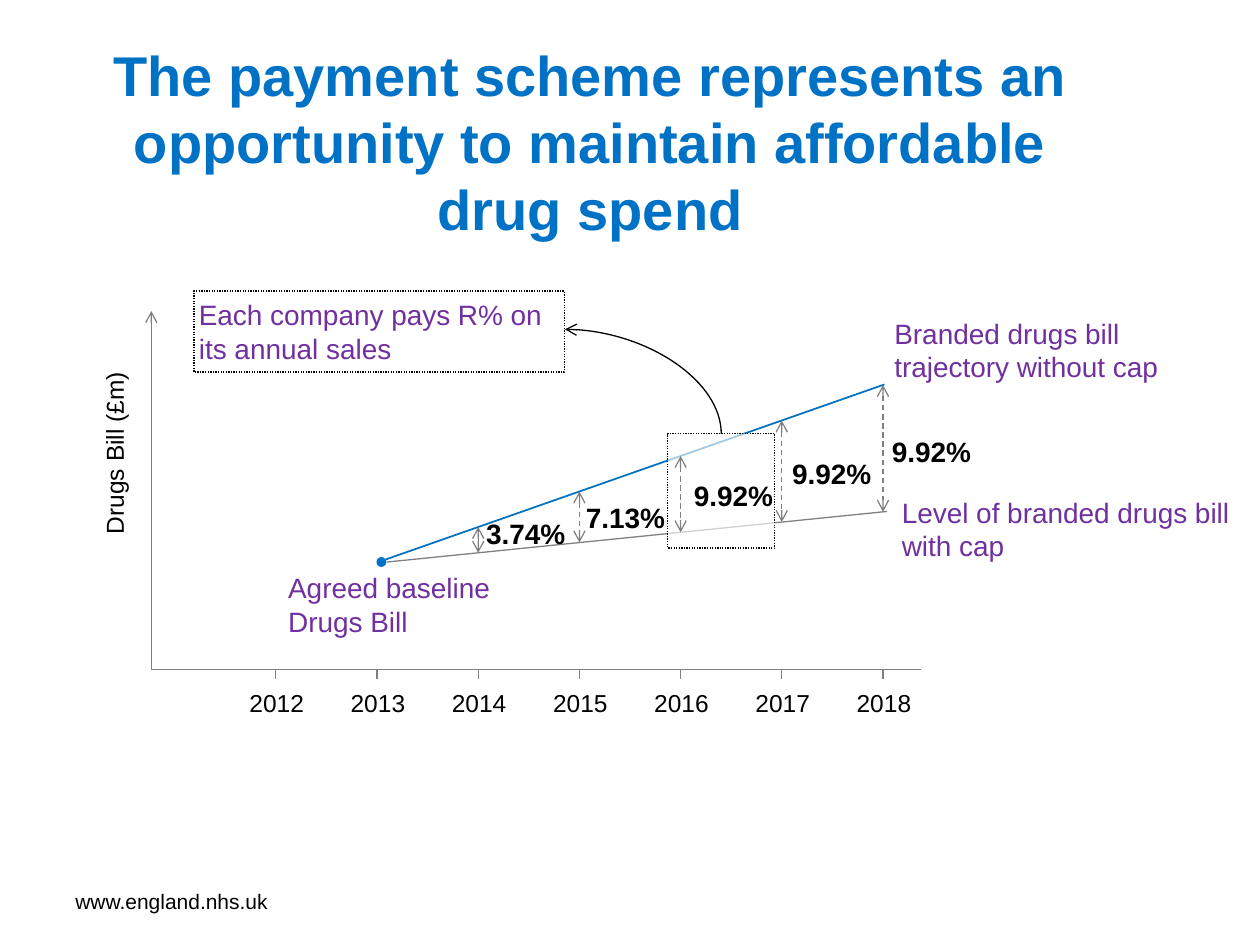
from lxml.etree import SubElement
from pptx import Presentation
from pptx.dml.color import RGBColor
from pptx.enum.dml import MSO_LINE
from pptx.enum.shapes import MSO_CONNECTOR, MSO_SHAPE
from pptx.enum.text import MSO_ANCHOR, MSO_AUTO_SIZE, PP_ALIGN
from pptx.oxml.ns import qn
from pptx.util import Cm, Pt

BLACK = RGBColor(0, 0, 0)
WHITE = RGBColor(0xFF, 0xFF, 0xFF)
GREY = RGBColor(0x80, 0x80, 0x80)
BLUE = RGBColor(0x00, 0x72, 0xC6)
LINE_BLUE = RGBColor(0x00, 0x70, 0xC0)
PURPLE = RGBColor(0x70, 0x30, 0xA0)

AXIS_X, AXIS_Y = 3.05, 13.49
YEAR_X, YEAR_STEP = 5.56, 2.04
UNCAPPED = (7.77, 11.28, 17.83, 7.75)
CAPPED = (7.8, 11.33, 17.88, 10.31)


def write(shape, text, size, color=BLACK, bold=False, align=PP_ALIGN.LEFT,
          anchor=MSO_ANCHOR.TOP, inset=None):
    frame = shape.text_frame
    frame.word_wrap = True
    frame.auto_size = MSO_AUTO_SIZE.NONE
    frame.vertical_anchor = anchor
    if inset is not None:
        frame.margin_left = frame.margin_right = Cm(inset)
        frame.margin_top = frame.margin_bottom = Cm(inset)
    para = frame.paragraphs[0]
    para.alignment = align
    run = para.add_run()
    run.text = text
    font = run.font
    font.name, font.size, font.bold = "Arial", Pt(size), bold
    font.color.rgb = color


def add_text(slide, place, text, size, **style):
    box = slide.shapes.add_textbox(*map(Cm, place))
    write(box, text, size, **style)
    return box


def add_line(slide, ends, color=GREY, width=0.75, dash=None, heads=(),
             kind=MSO_CONNECTOR.STRAIGHT):
    link = slide.shapes.add_connector(kind, *map(Cm, ends))
    link.line.color.rgb = color
    link.line.width = Pt(width)
    if dash:
        link.line.dash_style = dash
    for head in heads:
        SubElement(link.line._get_or_add_ln(), qn(f"a:{head}"), type="arrow")
    SubElement(link._element.spPr, qn("a:effectLst"))
    return link


def add_shape(slide, kind, place, fill=None, alpha=None, dotted=False):
    shape = slide.shapes.add_shape(kind, *map(Cm, place))
    shape.shadow.inherit = False
    if fill is None:
        shape.fill.background()
    else:
        shape.fill.solid()
        shape.fill.fore_color.rgb = fill
    if alpha:
        tint = shape._element.spPr.find(qn("a:solidFill"))[0]
        SubElement(tint, qn("a:alpha"), val=str(alpha * 1000))
    if dotted:
        shape.line.color.rgb = BLACK
        shape.line.width = Pt(0.75)
        shape.line.dash_style = MSO_LINE.ROUND_DOT
    else:
        shape.line.fill.background()
    return shape


def year_x(year):
    return YEAR_X + (year - 2012) * YEAR_STEP


def height_at(trend, x):
    x1, y1, x2, y2 = trend
    return y1 + (y2 - y1) * (x - x1) / (x2 - x1)


def add_gap(slide, year, text, place):
    # Dashed double arrow between the two trends, with its rate
    x = year_x(year)
    ends = (x, height_at(UNCAPPED, x), x, height_at(CAPPED, x))
    add_line(slide, ends, dash=MSO_LINE.DASH, heads=("headEnd", "tailEnd"))
    add_text(slide, (*place, 2.5, 0.94), text, 16, bold=True)


def add_axes(slide):
    add_line(slide, (AXIS_X, 6.27, AXIS_X, AXIS_Y), heads=("headEnd",))
    add_line(slide, (18.57, AXIS_Y, AXIS_X, AXIS_Y))
    for year in range(2012, 2019):
        x = year_x(year)
        add_line(slide, (x, AXIS_Y, x, AXIS_Y + 0.2))
        add_text(slide, (x - 1.03, 13.74, 2.1, 0.86), str(year), 14,
                 align=PP_ALIGN.CENTER)
    label = add_text(slide, (-0.08, 8.2, 4.78, 0.86), "Drugs Bill (£m)", 14)
    label.rotation = 270


def add_curve(slide):
    # Quarter curve from the 2016 frame up to the callout
    curve = add_line(slide, (11.91, 6.12, 14.02, 9.27), BLACK,
                     heads=("tailEnd",), kind=MSO_CONNECTOR.CURVE)
    props = curve._element.spPr
    props.find(qn("a:prstGeom")).set("prst", "curvedConnector2")
    frame = props.find(qn("a:xfrm"))
    frame.set("rot", str(270 * 60000))
    frame.set("flipV", "1")


def main():
    deck = Presentation()
    deck.slide_width, deck.slide_height = Cm(25.4), Cm(19.05)
    slide = deck.slides.add_slide(deck.slide_layouts[5])

    # Title and footer
    title = slide.shapes.title
    title.left, title.top = Cm(1.5), Cm(0.81)
    title.width, title.height = Cm(20.8), Cm(4.11)
    write(title, "The payment scheme represents an opportunity to maintain "
          "affordable drug spend", 32, BLUE, True, PP_ALIGN.CENTER, inset=0)
    add_text(slide, (1.27, 17.65, 5.92, 1.02), "www.england.nhs.uk", 12,
             anchor=MSO_ANCHOR.MIDDLE)

    # Axes and trends
    add_axes(slide)
    add_line(slide, CAPPED)
    add_line(slide, UNCAPPED, LINE_BLUE, 1)
    add_shape(slide, MSO_SHAPE.OVAL, (7.59, 11.23, 0.2, 0.2), BLUE)

    # Gaps, with the 2016 one in front of its frame
    add_gap(slide, 2014, "3.74%", (9.55, 10.29))
    add_gap(slide, 2015, "7.13%", (11.56, 9.96))
    add_gap(slide, 2017, "9.92%", (15.72, 9.07))
    add_gap(slide, 2018, "9.92%", (17.73, 8.64))
    add_shape(slide, MSO_SHAPE.RECTANGLE, (13.46, 8.74, 2.16, 2.31),
              WHITE, 63, True)
    add_gap(slide, 2016, "9.92%", (13.74, 9.53))

    # Notes beside the trends
    for place, text in (
        ((5.56, 11.38, 5.33, 1.63), "Agreed baseline Drugs Bill"),
        ((17.93, 9.86, 7.9, 1.63), "Level of branded drugs bill with cap"),
        ((17.78, 6.25, 6.91, 1.63), "Branded drugs bill trajectory without cap"),
    ):
        add_text(slide, place, text, 16, color=PURPLE)

    # Callout
    add_curve(slide)
    note = add_shape(slide, MSO_SHAPE.RECTANGLE, (3.91, 5.87, 7.47, 1.63),
                     dotted=True)
    write(note, "Each company pays R% on its annual sales", 16, PURPLE,
          anchor=MSO_ANCHOR.MIDDLE, inset=0.1)

    deck.save("out.pptx")


if __name__ == "__main__":
    main()
